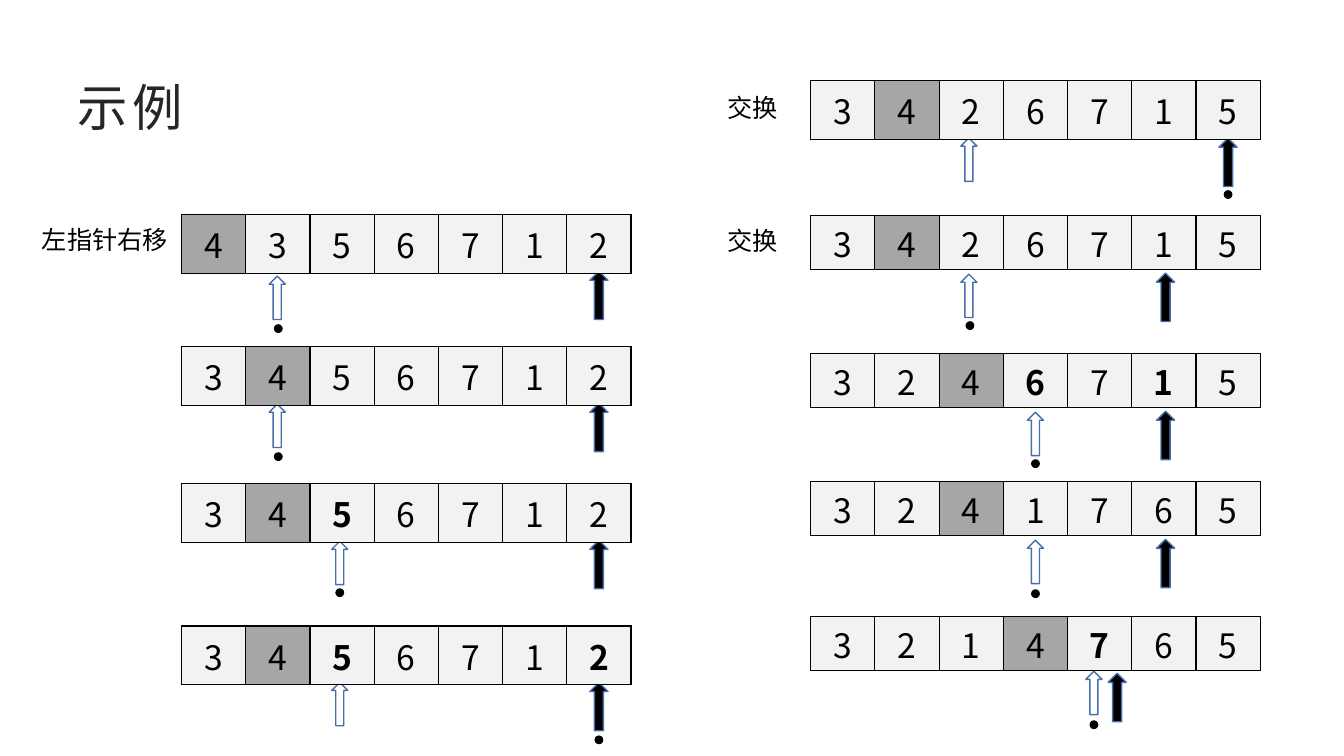
"""Build a slide that traces the two-pointer partition of an array around a pivot."""
from lxml import etree
from pptx import Presentation
from pptx import util as u
from pptx.dml import color
from pptx.enum import shapes, text
from pptx.oxml import ns

COLORS = {
    "ink": "000000",
    "title": "262626",
    "cell": "F2F2F2",
    "pivot": "A6A6A6",
    "pointer": "476FAA",
}
LEFT_COLUMN, RIGHT_COLUMN = 1.8, 8.04
ARRAY_WIDTH, ROW_HEIGHT = 4.46, 0.53
ROOMY, TIGHT = 0.05, 0.02
DOT_SIZE = 0.08
PIVOT = "4"

# array left, array top, digits, bold digits, cell margin,
# left pointer (centre, top), right pointer (centre, top), dot (centre, top)
STEPS = [
    (LEFT_COLUMN, 2.13, "4356712", "", ROOMY, (2.75, 2.74), (5.94, 2.69), (2.76, 3.22)),
    (LEFT_COLUMN, 3.44, "3456712", "", ROOMY, (2.75, 4.01), (5.94, 4.0), (2.76, 4.49)),
    (LEFT_COLUMN, 4.8, "3456712", "5", ROOMY, (3.37, 5.37), (5.94, 5.36), (3.37, 5.84)),
    (LEFT_COLUMN, 6.21, "3456712", "52", ROOMY, (3.37, 6.77), (5.94, 6.77), (5.94, 7.3)),
    (RIGHT_COLUMN, 0.8, "3426715", "", ROOMY, (9.61, 1.37), (12.18, 1.37), (12.18, 1.89)),
    (RIGHT_COLUMN, 2.14, "3426715", "", TIGHT, (9.61, 2.72), (11.56, 2.71), (9.62, 3.19)),
    (RIGHT_COLUMN, 3.51, "3246715", "61", TIGHT, (10.27, 4.09), (11.56, 4.08), (10.27, 4.56)),
    (RIGHT_COLUMN, 4.78, "3241765", "", TIGHT, (10.27, 5.36), (11.56, 5.35), (10.27, 5.85)),
    (RIGHT_COLUMN, 6.12, "3214765", "7", TIGHT, (10.85, 6.66), (11.08, 6.68), (10.85, 7.15)),
]
ACTIONS = [
    ("左指针右移", 0.33, 2.19, 1.42),
    ("交换", 7.07, 0.88, 0.79),
    ("交换", 7.07, 2.2, 0.79),
]


def rgb(name):
    """Return the named colour."""
    return color.RGBColor.from_string(COLORS[name])


def style_paragraph(paragraph, size, font_name, color_name, align, bold=False):
    """Set the font and alignment of a paragraph."""
    paragraph.alignment = align
    paragraph.font.size = u.Pt(size)
    paragraph.font.name = font_name
    paragraph.font.bold = bold
    paragraph.font.color.rgb = rgb(color_name)


def add_title(slide, wording):
    """Place the letter-spaced title in its placeholder."""
    title = slide.shapes.title
    title.left, title.top = u.Inches(0.67), u.Inches(0.67)
    title.width, title.height = u.Inches(4.95), u.Inches(0.77)
    frame = title.text_frame
    frame.text = wording
    frame.vertical_anchor = text.MSO_ANCHOR.MIDDLE
    paragraph = frame.paragraphs[0]
    style_paragraph(paragraph, 36, "Arial", "title", text.PP_ALIGN.LEFT)
    paragraph.runs[0].font._element.set("spc", "300")


def add_mark(slide, preset, centre, top, width, height, fill, line, weight):
    """Add a small preset shape centred on a horizontal position."""
    mark = slide.shapes.add_shape(
        preset, u.Inches(centre - width / 2), u.Inches(top), u.Inches(width), u.Inches(height))
    mark.shadow.inherit = False
    if fill:
        mark.fill.solid()
        mark.fill.fore_color.rgb = rgb(fill)
    else:
        mark.fill.background()
    mark.line.color.rgb = rgb(line)
    mark.line.width = u.Pt(weight)


def add_borders(cell):
    """Give a cell a thin dark border on all four sides."""
    properties = cell._tc.get_or_add_tcPr()
    for position, side in enumerate(("a:lnL", "a:lnR", "a:lnT", "a:lnB")):
        border = etree.Element(ns.qn(side), w=str(u.Pt(1)))
        fill = etree.SubElement(border, ns.qn("a:solidFill"))
        etree.SubElement(fill, ns.qn("a:srgbClr"), val=COLORS["ink"])
        properties.insert(position, border)


def add_array(slide, left, top, digits, bold_digits, margin):
    """Add one array as a single-row table with its pivot shaded."""
    array = slide.shapes.add_table(
        1, len(digits), u.Inches(left), u.Inches(top),
        u.Inches(ARRAY_WIDTH), u.Inches(ROW_HEIGHT)).table
    array.first_row = array.horz_banding = False
    for cell, digit in zip(array.iter_cells(), digits):
        cell.text = digit
        cell.vertical_anchor = text.MSO_ANCHOR.MIDDLE
        cell.margin_top = cell.margin_bottom = u.Inches(margin)
        cell.fill.solid()
        cell.fill.fore_color.rgb = rgb("pivot" if digit == PIVOT else "cell")
        add_borders(cell)
        style_paragraph(cell.text_frame.paragraphs[0], 24, "Noto Sans CJK SC", "ink",
                        text.PP_ALIGN.CENTER, digit in bold_digits)


def add_step(slide, left, top, digits, bold_digits, margin, left_pointer, right_pointer, dot):
    """Add an array with its two pointers and the dot of the active pointer."""
    arrow, ellipse = shapes.MSO_SHAPE.UP_ARROW, shapes.MSO_SHAPE.OVAL
    add_mark(slide, arrow, *right_pointer, 0.18, 0.48, "ink", "pointer", 1)
    add_mark(slide, arrow, *left_pointer, 0.16, 0.43, None, "pointer", 1)
    add_array(slide, left, top, digits, bold_digits, margin)
    add_mark(slide, ellipse, *dot, DOT_SIZE, DOT_SIZE, "ink", "ink", 0.5)


def add_action(slide, wording, left, top, width):
    """Add the name of the action beside an array."""
    frame = slide.shapes.add_textbox(
        u.Inches(left), u.Inches(top), u.Inches(width), u.Inches(0.38)).text_frame
    frame.word_wrap = True
    frame.margin_left = frame.margin_right = u.Inches(0.04)
    frame.margin_top = frame.margin_bottom = u.Inches(0.04)
    frame.text = wording
    style_paragraph(frame.paragraphs[0], 18, "Arial", "ink", text.PP_ALIGN.CENTER)


def main():
    """Build and save the slide."""
    deck = Presentation()
    deck.slide_width, deck.slide_height = u.Inches(13.33), u.Inches(7.5)
    slide = deck.slides.add_slide(deck.slide_layouts[5])
    add_title(slide, "示例")
    for step in STEPS:
        add_step(slide, *step)
    for action in ACTIONS:
        add_action(slide, *action)
    deck.save("out.pptx")


if __name__ == "__main__":
    main()
